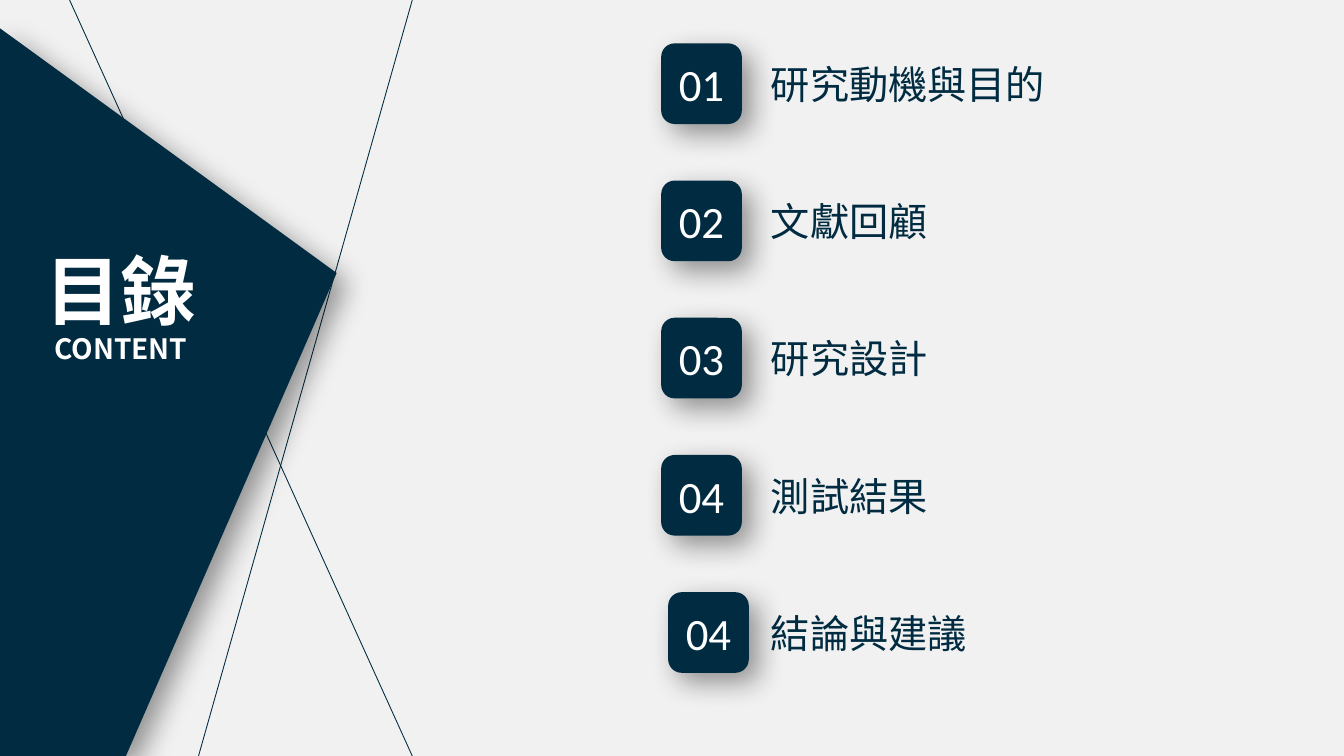
from lxml import etree
from pptx import Presentation
from pptx.dml.color import RGBColor
from pptx.enum.shapes import MSO_CONNECTOR, MSO_SHAPE
from pptx.enum.text import MSO_ANCHOR, MSO_AUTO_SIZE, PP_ALIGN
from pptx.oxml.ns import qn
from pptx.util import Pt

STRAIGHT = MSO_CONNECTOR.STRAIGHT
RECTANGLE, ROUNDED = MSO_SHAPE.RECTANGLE, MSO_SHAPE.ROUNDED_RECTANGLE
MIDDLE = MSO_ANCHOR.MIDDLE
NO_AUTOFIT = MSO_AUTO_SIZE.NONE
LEFT, CENTER = PP_ALIGN.LEFT, PP_ALIGN.CENTER

COLORS = {"navy": "002B41", "paper": "F1F1F1", "white": "FFFFFF", "shadow": "000000"}
CJK_FONT, NUMBER_FONT = "Noto Sans CJK SC", "Calibri"
SLIDE_WIDTH, SLIDE_HEIGHT = 960, 540
ROW_PITCH, BADGE_SIZE = 98, 57.6
CHAPTERS = [
    ("01", "研究動機與目的", 0),
    ("02", "文獻回顧", 0),
    ("03", "研究設計", 0),
    ("04", "測試結果", 0),
    ("04", "結論與建議", 5),
]


def color(name):
    return RGBColor.from_string(COLORS[name])


def fill_shape(shape, fill):
    shape.shadow.inherit = False
    shape.fill.solid()
    shape.fill.fore_color.rgb = color(fill)
    shape.line.fill.background()


def add_shadow(shape):
    """Cast a soft shadow to the lower right."""
    effects = shape._element.spPr.find(qn("a:effectLst"))
    shadow = etree.SubElement(
        effects, qn("a:outerShdw"), blurRad=str(Pt(20)), dist=str(Pt(10)),
        dir=str(45 * 60000), algn="tl", rotWithShape="0")
    shade = etree.SubElement(shadow, qn("a:srgbClr"), val=COLORS["shadow"])
    etree.SubElement(shade, qn("a:alpha"), val="40000")


def add_run(paragraph, text, size, font, ink, bold=False):
    run = paragraph.add_run()
    run.text = text
    run.font.size = Pt(size)
    run.font.name = font
    run.font.bold = bold
    run.font.color.rgb = color(ink)
    properties = run._r.get_or_add_rPr()
    etree.SubElement(properties, qn("a:ea"), typeface=font)


def set_frame(shape, align, margin, wrap=True):
    """Centre the text vertically and return its first paragraph."""
    frame = shape.text_frame
    frame.word_wrap = wrap
    frame.auto_size = NO_AUTOFIT
    frame.vertical_anchor = MIDDLE
    frame.margin_left = frame.margin_right = Pt(margin)
    frame.margin_top = frame.margin_bottom = Pt(margin / 2)
    paragraph = frame.paragraphs[0]
    paragraph.alignment = align
    return paragraph


def add_thin_line(slide, x1, y1, x2, y2):
    line = slide.shapes.add_connector(STRAIGHT, Pt(x1), Pt(y1), Pt(x2), Pt(y2))
    line.line.color.rgb = color("navy")
    line.line.width = Pt(0.63)
    etree.SubElement(line._element.spPr, qn("a:effectLst"))


def add_title_panel(slide, left, top, width, height):
    """Crossing lines, the dark pointed panel and the title on it."""
    right, bottom = left + width, top + height
    add_thin_line(slide, right, top, left + 141.8, bottom)
    add_thin_line(slide, right, bottom, left + 49.7, top)

    builder = slide.shapes.build_freeform(Pt(left), Pt(top + 20.2))
    corners = [(left + 240.5, top + 195), (left + 90, bottom), (left, bottom)]
    builder.add_line_segments([(Pt(x), Pt(y)) for x, y in corners], close=True)
    panel = builder.convert_to_shape()
    fill_shape(panel, "navy")
    add_shadow(panel)

    title = slide.shapes.title
    title.left, title.top = Pt(left + 17.3), Pt(top + 172.8)
    title.width, title.height = Pt(138.2), Pt(97.2)
    slide.shapes._spTree.append(title._element)
    paragraph = set_frame(title, CENTER, 7.2)
    paragraph.line_spacing = 0.9
    add_run(paragraph, "目錄", 54, CJK_FONT, "white", bold=True)
    add_run(paragraph, "CONTENT", 20, CJK_FONT, "white", bold=True)


def add_chapter(slide, left, top, number, name, shift):
    """One row: a chapter name and its numbered badge, moved right by shift."""
    label = slide.shapes.add_shape(
        RECTANGLE, Pt(left + 71.3), Pt(top + 8.2), Pt(228.2), Pt(41.2))
    fill_shape(label, "paper")
    add_run(set_frame(label, LEFT, 7.2), name, 28, CJK_FONT, "navy")

    badge = slide.shapes.add_shape(
        ROUNDED, Pt(left + shift), Pt(top), Pt(BADGE_SIZE), Pt(BADGE_SIZE))
    fill_shape(badge, "navy")
    add_shadow(badge)
    paragraph = set_frame(badge, CENTER, 0, wrap=False)
    add_run(paragraph, number, 32, NUMBER_FONT, "white")


def add_chapter_list(slide, left, top):
    for index, (number, name, shift) in enumerate(CHAPTERS):
        add_chapter(slide, left, top + index * ROW_PITCH, number, name, shift)


def main():
    presentation = Presentation()
    presentation.slide_width = Pt(SLIDE_WIDTH)
    presentation.slide_height = Pt(SLIDE_HEIGHT)
    slide = presentation.slides.add_slide(
        presentation.slide_layouts.get_by_name("Title Only"))
    background = slide.background.fill
    background.solid()
    background.fore_color.rgb = color("paper")
    add_title_panel(slide, 0, 0, 294.5, SLIDE_HEIGHT)
    add_chapter_list(slide, 472.3, 31)
    presentation.save("out.pptx")


if __name__ == "__main__":
    main()
